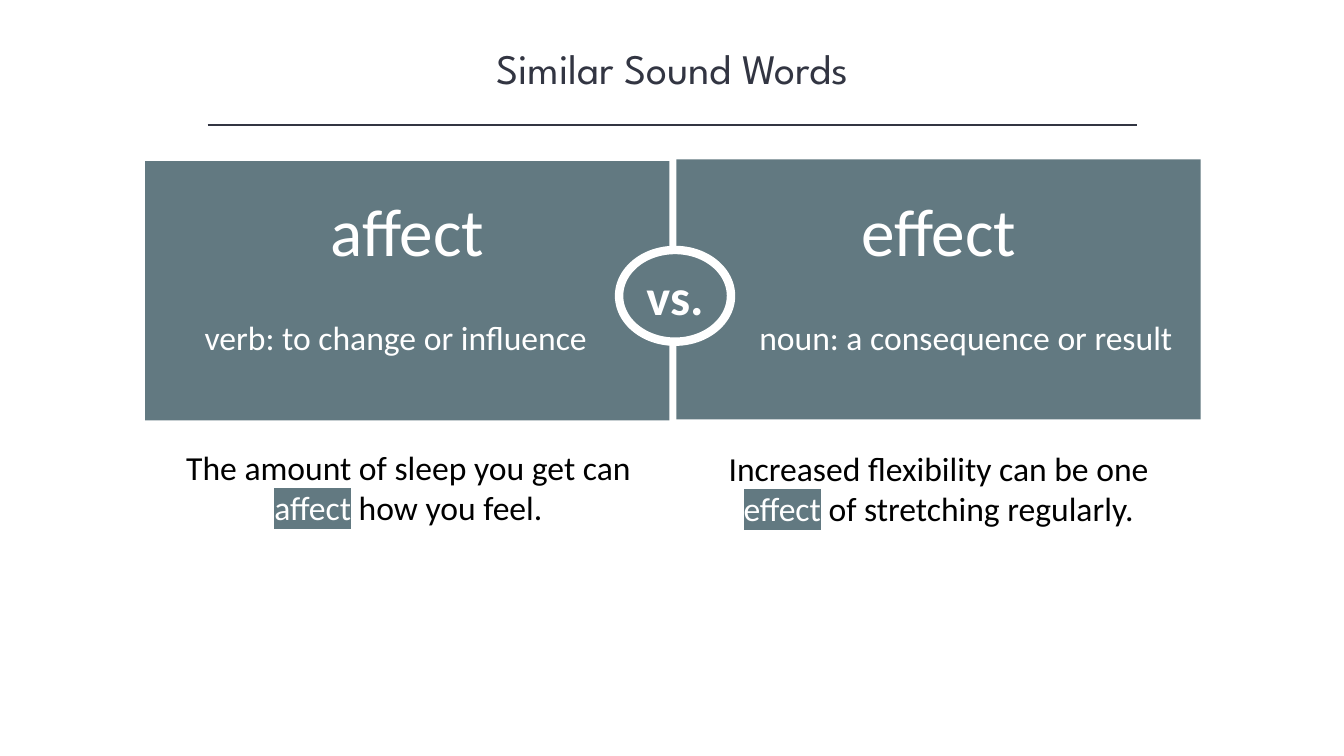
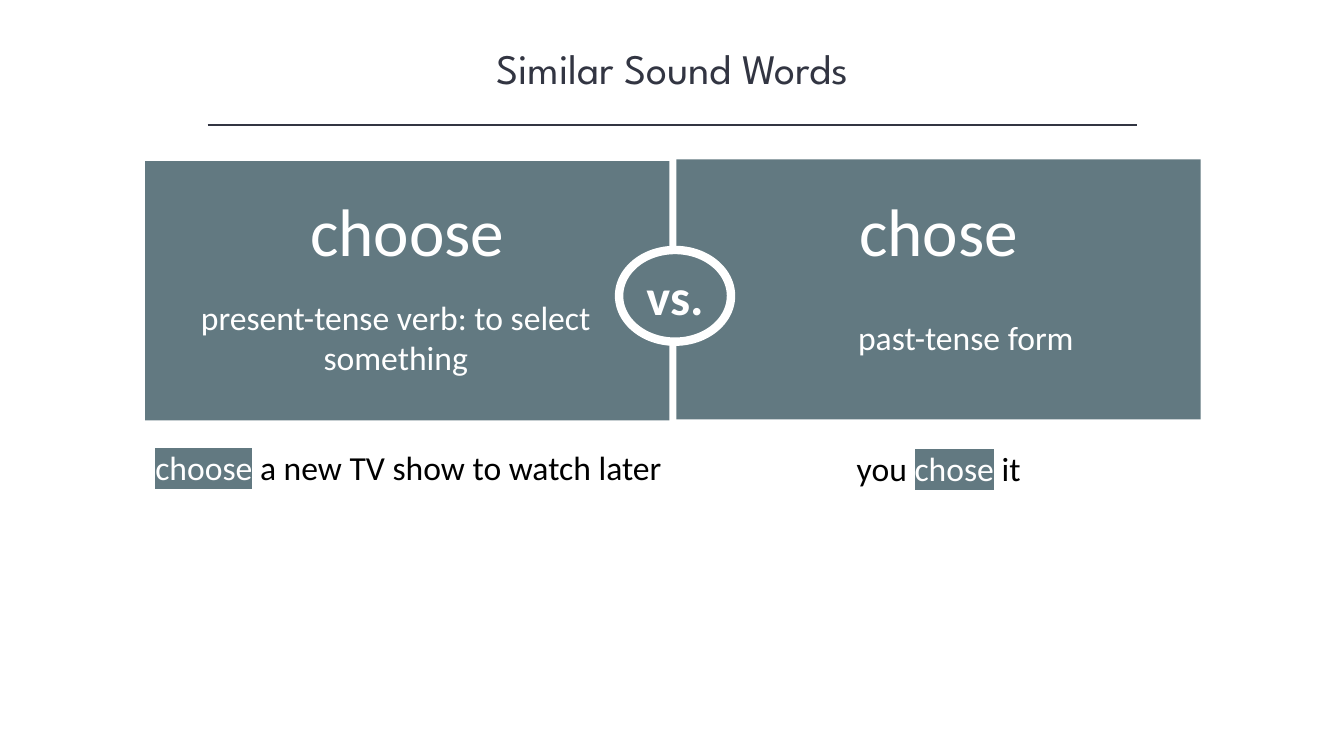
from lxml import etree
from pptx import Presentation
from pptx.dml.color import RGBColor
from pptx.enum.shapes import MSO_CONNECTOR, MSO_SHAPE
from pptx.enum.text import MSO_ANCHOR, MSO_AUTO_SIZE, PP_ALIGN
from pptx.oxml.ns import qn
from pptx.util import Inches, Pt

RECT, OVAL = MSO_SHAPE.RECTANGLE, MSO_SHAPE.OVAL
STRAIGHT = MSO_CONNECTOR.STRAIGHT
TOP, MIDDLE = MSO_ANCHOR.TOP, MSO_ANCHOR.MIDDLE
CENTER = PP_ALIGN.CENTER
NO_FIT = MSO_AUTO_SIZE.NONE
TITLE_ONLY = 5

INK, SLATE, WHITE, BLACK = "323542", "627981", "FFFFFF", "000000"
TITLE_FONT, BODY_FONT = "League Spartan", "Calibri"

# left, top, width, height
PANELS = [(1.44, 1.6, 5.2, 2.57), (6.71, 1.58, 5.2, 2.58)]
DEFINITIONS = [(1.83, 2.89, 4.19, 0.91), (7.43, 2.89, 4.3, 0.91)]
EXAMPLES = [(1.44, 4.38, 5.22, 0.91), (6.71, 4.39, 5.2, 0.91)]
BADGE = (6.14, 2.48, 1.11, 0.91)
WORD_TOP, WORD_HEIGHT = 1.83, 0.91

# For each side: word, definition, text before and after the word in the example
PAIRS = [
    [("affect", "verb: to change or influence",
      "The amount of sleep you get can ", " how you feel."),
     ("effect", "noun: a consequence or result",
      "Increased flexibility can be one ", " of stretching regularly.")],
    [("choose", "present-tense verb: to select something",
      "", " a new TV show to watch later"),
     ("chose", "past-tense form", "you ", " it")],
]


def rgb(value):
    return RGBColor.from_string(value)


def write(shape, runs, size, anchor=TOP, font=BODY_FONT, bold=False):
    """Fill a shape with one centred paragraph of (text, colour, highlight) runs."""
    tf = shape.text_frame
    tf.word_wrap = True
    tf.auto_size = NO_FIT
    tf.vertical_anchor = anchor
    p = tf.paragraphs[0]
    p.alignment = CENTER
    for text, color, highlight in runs:
        r = p.add_run()
        r.text = text
        r.font.size = Pt(size)
        r.font.bold = bold
        r.font.color.rgb = rgb(color)
        if highlight:
            mark = etree.SubElement(r.font._element, qn("a:highlight"))
            etree.SubElement(mark, qn("a:srgbClr"), val=highlight)
        r.font.name = font


prs = Presentation()
prs.slide_width, prs.slide_height = Inches(13.33), Inches(7.5)

for pair in PAIRS:
    s = prs.slides.add_slide(prs.slide_layouts[TITLE_ONLY])

    title = s.shapes.title
    title.left, title.top = Inches(1.67), Inches(0.37)
    title.width, title.height = Inches(10), Inches(0.61)
    write(title, [("Similar Sound Words", INK, None)], 30, font=TITLE_FONT)

    rule = s.shapes.add_connector(STRAIGHT, Inches(2.06), Inches(1.24),
                                  Inches(11.28), Inches(1.24))
    rule.line.color.rgb = rgb(INK)
    rule.line.width = Pt(1)
    etree.SubElement(rule._element.spPr, qn("a:effectLst"))

    group = s.shapes.add_group_shape()
    for kind, box in [(RECT, PANELS[0]), (RECT, PANELS[1]), (OVAL, BADGE)]:
        sp = group.shapes.add_shape(kind, *map(Inches, box))
        sp.shadow.inherit = False
        sp.fill.solid()
        sp.fill.fore_color.rgb = rgb(SLATE)
        if kind == OVAL:
            sp.line.color.rgb = rgb(WHITE)
            sp.line.width = Pt(6)
            sp.text_frame.margin_left = sp.text_frame.margin_right = 0
            write(sp, [("vs.", WHITE, None)], 36, MIDDLE, bold=True)
        else:
            sp.line.fill.background()

    for side, panel, definition_box, example_box in zip(
            pair, PANELS, DEFINITIONS, EXAMPLES):
        word, definition, before, after = side
        word_box = (panel[0], WORD_TOP, panel[2], WORD_HEIGHT)
        example = [(before, BLACK, None), (word, WHITE, SLATE), (after, BLACK, None)]
        for box, runs, size, anchor in [
            (definition_box, [(definition, WHITE, None)], 24, MIDDLE),
            (word_box, [(word, WHITE, None)], 48, TOP),
            (example_box, [run for run in example if run[0]], 24, TOP),
        ]:
            write(s.shapes.add_textbox(*map(Inches, box)), runs, size, anchor)

prs.save("out.pptx")
